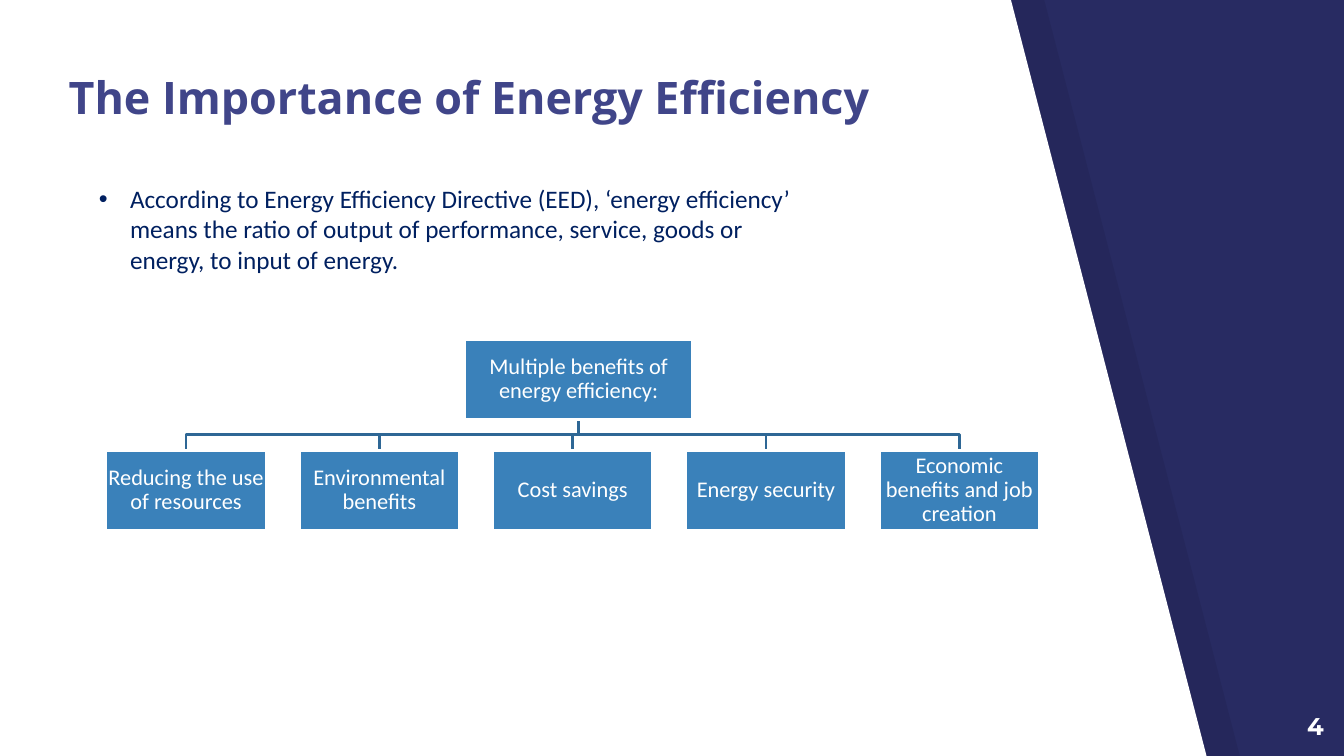
from dataclasses import dataclass

from lxml import etree
from pptx import Presentation
from pptx.dml.color import RGBColor
from pptx.enum.shapes import MSO_SHAPE
from pptx.enum.text import MSO_ANCHOR, MSO_AUTO_SIZE, PP_ALIGN
from pptx.oxml.ns import qn
from pptx.util import Inches, Pt

RECT = MSO_SHAPE.RECTANGLE
TOP, MIDDLE, BOTTOM = MSO_ANCHOR.TOP, MSO_ANCHOR.MIDDLE, MSO_ANCHOR.BOTTOM
LEFT, CENTER, RIGHT = PP_ALIGN.LEFT, PP_ALIGN.CENTER, PP_ALIGN.RIGHT


@dataclass(frozen=True)
class Theme:
    navy: str = "282B62"
    white: str = "FFFFFF"
    black: str = "000000"
    title: str = "404589"
    body: str = "002060"
    box: str = "3A81BA"
    line: str = "2E6795"
    title_font: str = "Open Sans"
    body_font: str = "Calibri"
    number_font: str = "Montserrat"
    title_size: float = 32
    body_size: float = 18
    box_size: float = 16
    number_size: float = 17.3
    line_width: float = 2


THEME = Theme()


def rgb(color):
    return RGBColor.from_string(color)


def place(sp, x, y, w, h):
    sp.left, sp.top, sp.width, sp.height = (Inches(v) for v in (x, y, w, h))


def write(sp, text, font, size, color, bold=False, align=LEFT, anchor=TOP, inset=0.13):
    tf = sp.text_frame
    tf.word_wrap = True
    tf.auto_size = MSO_AUTO_SIZE.NONE
    tf.vertical_anchor = anchor
    tf.margin_left = tf.margin_right = tf.margin_top = tf.margin_bottom = Inches(inset)
    tf.text = text
    p = tf.paragraphs[0]
    p.alignment = align
    p.space_before = Pt(0)
    f = p.runs[0].font
    f.name, f.size, f.bold = font, Pt(size), bold
    f.color.rgb = rgb(color)
    return p


def outline(s, points, close):
    start, *rest = [(Inches(x), Inches(y)) for x, y in points]
    builder = s.shapes.build_freeform(*start)
    builder.add_line_segments(rest, close=close)
    sp = builder.convert_to_shape()
    sp.shadow.inherit = False
    return sp


def add_backdrop(s, x, y, w, h):
    s.background.fill.solid()
    s.background.fill.fore_color.rgb = rgb(THEME.navy)
    panels = ((0.33, THEME.black, 7), (0, THEME.white, 100))
    for depth, (shift, color, alpha) in enumerate(panels):
        left = x + shift
        sp = outline(s, [(left, y), (left, y + h),
                         (left + 0.9 * w - 0.03, y + h), (left + 0.75 * w + 0.03, y)], True)
        sp.fill.solid()
        sp.fill.fore_color.rgb = rgb(color)
        sp.line.fill.background()
        clr = sp.fill._xPr.find(".//" + qn("a:srgbClr"))
        etree.SubElement(clr, qn("a:alpha"), val=str(alpha * 1000))
        s.shapes._spTree.insert(2 + depth, sp._element)


def add_title(s, x, y, w, h):
    sp = s.shapes.title
    place(sp, x, y, w, h)
    write(sp, "The Importance of Energy Efficiency", THEME.title_font,
          THEME.title_size, THEME.title, bold=True, anchor=BOTTOM)


def add_definition(s, x, y, w, h):
    sp = s.placeholders[1]
    place(sp, x, y, w, h)
    p = write(sp, "According to Energy Efficiency Directive (EED), ‘energy efficiency’ means "
              "the ratio of output of performance, service, goods or energy, to input of energy.",
              THEME.body_font, THEME.body_size, THEME.body, inset=0.1)
    pPr = p._p.get_or_add_pPr()
    pPr.set("marL", str(Inches(0.31)))
    pPr.set("indent", str(-Inches(0.31)))
    etree.SubElement(pPr, qn("a:buFont"), typeface="Arial")
    etree.SubElement(pPr, qn("a:buChar"), char="•")


def add_box(s, text, x, y, w, h):
    sp = s.shapes.add_shape(RECT, *(Inches(v) for v in (x, y, w, h)))
    sp.shadow.inherit = False
    sp.fill.solid()
    sp.fill.fore_color.rgb = rgb(THEME.box)
    sp.line.color.rgb = rgb(THEME.white)
    sp.line.width = Pt(THEME.line_width)
    p = write(sp, text, THEME.body_font, THEME.box_size, THEME.white,
              align=CENTER, anchor=MIDDLE, inset=0.01)
    p.line_spacing = 0.9


def add_branch(s, x1, y1, x2, y2):
    middle = (y1 + y2) / 2
    sp = outline(s, [(x1, y1), (x1, middle), (x2, middle), (x2, y2)], False)
    sp.fill.background()
    sp.line.color.rgb = rgb(THEME.line)
    sp.line.width = Pt(THEME.line_width)


def add_benefits(s, x, y, w, h):
    benefits = ["Reducing the use of resources", "Environmental benefits", "Cost savings",
                "Energy security", "Economic benefits and job creation"]
    box_w, box_h, root_w = 1.59, 0.79, 2.26
    root_x = x + 3.56
    row_y = y + h - box_h
    step = (w - box_w) / (len(benefits) - 1)
    lefts = [x + i * step for i in range(len(benefits))]
    for left in lefts:
        add_branch(s, root_x + root_w / 2, y + box_h, left + box_w / 2, row_y)
    add_box(s, "Multiple benefits of energy efficiency:", root_x, y, root_w, box_h)
    for text, left in zip(benefits, lefts):
        add_box(s, text, left, row_y, box_w, box_h)


def add_number(s, x, y, w, h):
    sp = s.shapes.add_textbox(*(Inches(v) for v in (x, y, w, h)))
    write(sp, "4", THEME.number_font, THEME.number_size, THEME.white, bold=True, align=RIGHT)


def main():
    prs = Presentation()
    prs.slide_width, prs.slide_height = Inches(13.33), Inches(7.5)
    s = prs.slides.add_slide(prs.slide_layouts[1])
    add_backdrop(s, 0, 0, 13.33, 7.5)
    add_title(s, 0.55, 0.05, 9.26, 1.31)
    add_definition(s, 0.88, 1.72, 7.09, 1.31)
    add_benefits(s, 1.05, 3.37, 9.26, 1.89)
    add_number(s, 12.46, 6.93, 0.8, 0.57)
    prs.save("out.pptx")


if __name__ == "__main__":
    main()
